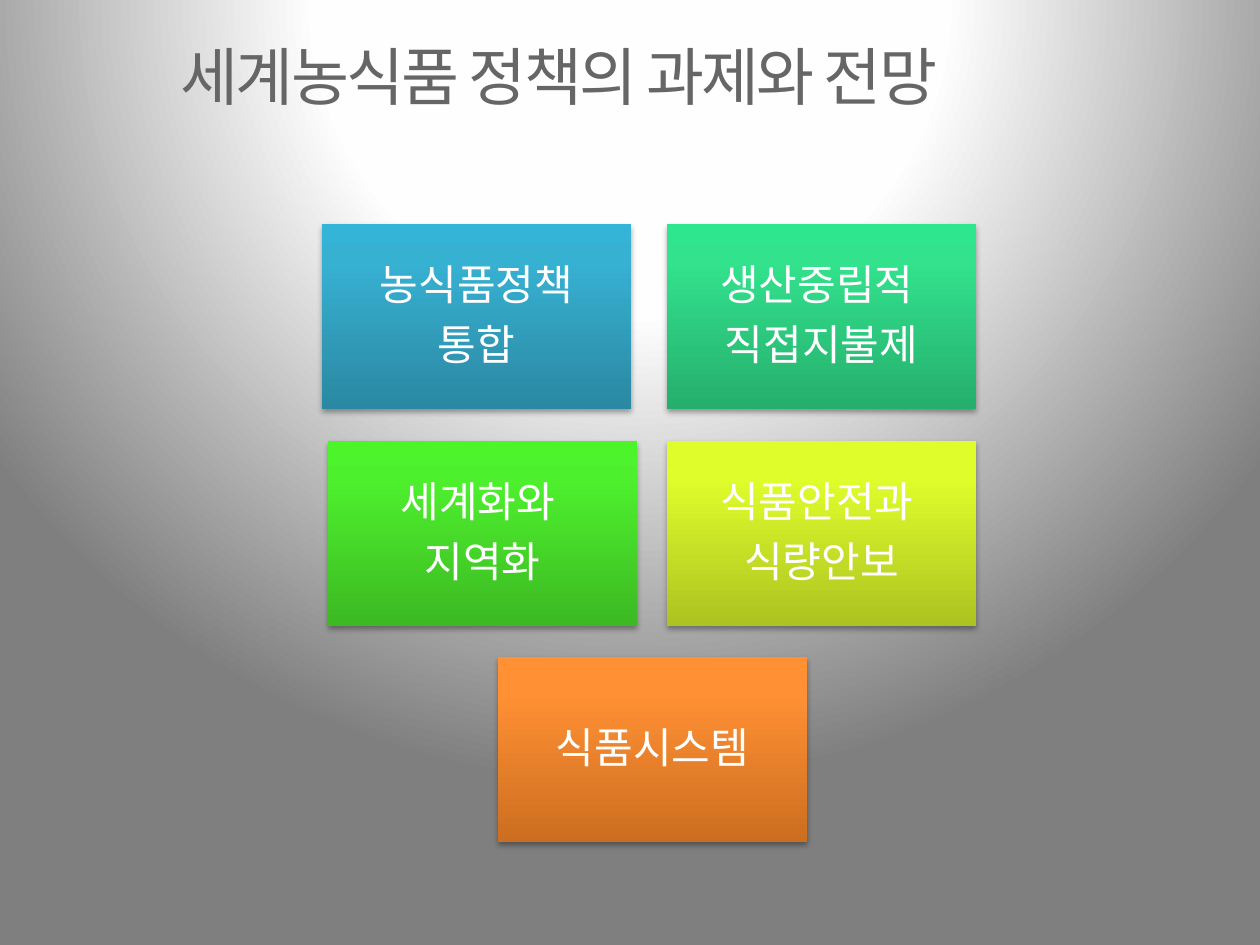
from lxml import etree
from pptx import Presentation
from pptx import util as u
from pptx.dml import color
from pptx.enum import shapes, text
from pptx.oxml import parse_xml
from pptx.oxml.ns import nsdecls, qn

FONT = "Noto Sans CJK KR"
BOX_SIZE = (309, 185)
ROW_TOPS = (224, 441, 657)
BOXES = [
    (322, 0, ["농식품정책", "통합"], ("2A88A2", "37B1D2", "34B4D6")),
    (667, 0, ["생산중립적 ", "직접지불제"], ("26AE6D", "32E28D", "2EE68E")),
    (328, 1, ["세계화와 ", "지역화"], ("3CB923", "4EF02E", "4CF52A")),
    (667, 1, ["식품안전과 ", "식량안보"], ("ACC321", "DFFD2B", "E1FF2B")),
    (498, 2, ["식품시스템"], ("CC6E20", "FF9034", "FF9136")),
]


def px(length):
    """Turn pixels into EMU."""
    return u.Emu(round(length * 914400 / 126))


def rgb(value):
    """Turn a hex string into a colour."""
    return color.RGBColor.from_string(value)


def set_gradient(fill, properties, stops, direction):
    """Give a fill the listed stops and a linear or path direction."""
    fill.gradient()
    marks = "".join(
        f'<a:gs pos="{place * 1000}"><a:srgbClr val="{value}"/></a:gs>' for place, value in stops
    )
    gradient = parse_xml(
        f'<a:gradFill {nsdecls("a")} rotWithShape="1"><a:gsLst>{marks}</a:gsLst>{direction}</a:gradFill>'
    )
    properties.replace(properties.find(qn("a:gradFill")), gradient)


def format_span(span, size, value):
    """Set the font, size and colour of a run."""
    span.font.name = FONT
    span.font.size = u.Pt(size)
    span.font.color.rgb = rgb(value)
    etree.SubElement(span.font._element, qn("a:ea"), typeface=FONT)


def set_background(page):
    """Paint the page with a round glow from above its top edge."""
    fill = page.background.fill
    fill.solid()
    set_gradient(
        fill,
        page._element.cSld.bg.bgPr,
        [(0, "FFFFFF"), (40, "FEFEFE"), (100, "7F7F7F")],
        '<a:path path="circle"><a:fillToRect l="50000" t="-80000" r="50000" b="180000"/></a:path>',
    )


def add_title(page, words):
    """Fill and place the title placeholder."""
    title = page.shapes.title
    title.left, title.top, title.width, title.height = map(px, (168, 20, 1092, 110))
    frame = title.text_frame
    frame.text = words
    frame.word_wrap = True
    frame.auto_size = text.MSO_AUTO_SIZE.NONE
    frame.vertical_anchor = text.MSO_ANCHOR.MIDDLE
    para = frame.paragraphs[0]
    para.alignment = text.PP_ALIGN.LEFT
    format_span(para.runs[0], 36, "666666")
    para.runs[0].font._element.set("spc", "-150")


def add_shadow(box):
    """Add a soft shadow below a box."""
    box.shadow.inherit = False
    effects = box._element.spPr.find(qn("a:effectLst"))
    effects.append(parse_xml(
        f'<a:outerShdw {nsdecls("a")} blurRad="40000" dist="23000" dir="5400000" rotWithShape="0">'
        '<a:srgbClr val="000000"><a:alpha val="35000"/></a:srgbClr></a:outerShdw>'
    ))


def add_box(page, left, top, lines, colours):
    """Add a shaded rectangle with centred lines of text."""
    box = page.shapes.add_shape(shapes.MSO_SHAPE.RECTANGLE, px(left), px(top), *map(px, BOX_SIZE))
    set_gradient(box.fill, box._element.spPr, zip((0, 80, 100), colours),
                 '<a:lin ang="16200000" scaled="0"/>')
    box.line.fill.background()
    add_shadow(box)
    frame = box.text_frame
    frame.text = "\n".join(lines)
    frame.word_wrap = True
    frame.vertical_anchor = text.MSO_ANCHOR.MIDDLE
    frame.margin_left = frame.margin_right = u.Inches(0.1)
    frame.margin_top = frame.margin_bottom = u.Inches(0.1)
    for para in frame.paragraphs:
        para.alignment = text.PP_ALIGN.CENTER
        para.line_spacing = 0.9
        after = etree.SubElement(para._p.get_or_add_pPr(), qn("a:spcAft"))
        etree.SubElement(after, qn("a:spcPct"), val="35000")
        format_span(para.runs[0], 24, "FFFFFF")


def main():
    """Build the slide and save it."""
    deck = Presentation()
    deck.slide_width, deck.slide_height = px(1260), px(945)
    page = deck.slides.add_slide(deck.slide_layouts[5])
    set_background(page)
    add_title(page, "세계농식품 정책의 과제와 전망")
    for left, row, lines, colours in BOXES:
        add_box(page, left, ROW_TOPS[row], lines, colours)
    deck.save("out.pptx")


if __name__ == "__main__":
    main()
